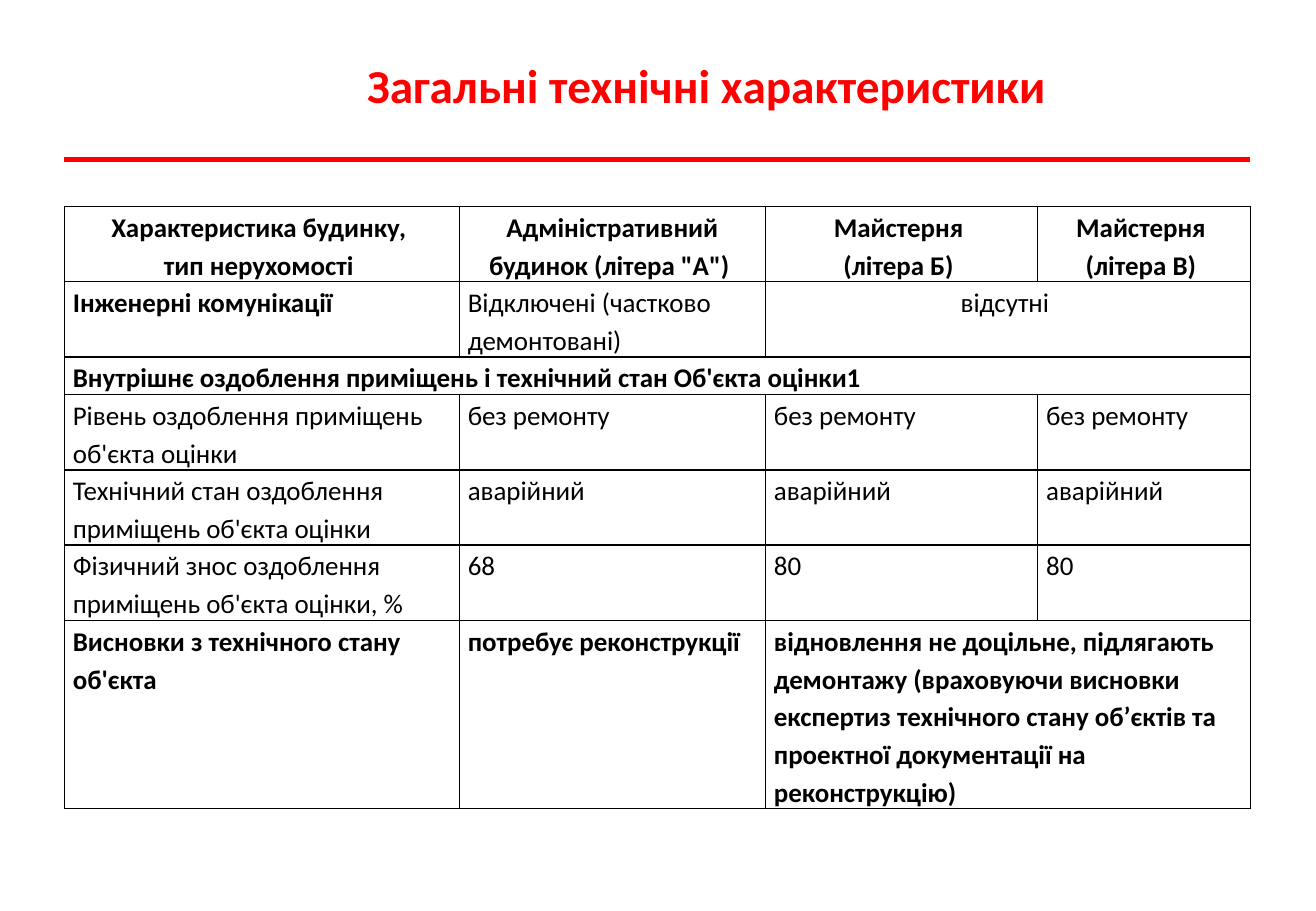
"""Build a slide with a table of the general technical characteristics of buildings."""
import lxml.etree
import pptx
import pptx.dml.color
import pptx.enum.shapes
import pptx.enum.text
import pptx.oxml.ns
import pptx.util

WIDTH, HEIGHT = 10.83, 7.5
LEFT, TABLE_TOP, LINE_HEIGHT = 0.53, 1.7, 0.31
COLUMNS = (3.25, 2.52, 2.24, 1.75)
FONT, RED, BLACK = "Calibri", "FF0000", "000000"

ROW_LINES = (2, 2, 1, 2, 2, 2, 5)
ROWS = (
    ("Характеристика будинку, \nтип нерухомості ",
     "Адміністративний будинок (літера \"А\") ",
     "Майстерня \n(літера Б) ", "Майстерня \n(літера В) "),
    ("Інженерні комунікації", "Відключені (частково демонтовані)", "відсутні "),
    ("Внутрішнє оздоблення приміщень і технічний стан Об'єкта оцінки1",),
    ("Рівень оздоблення приміщень об'єкта оцінки",) + ("без ремонту",) * 3,
    ("Технічний стан оздоблення приміщень об'єкта оцінки",) + ("аварійний",) * 3,
    ("Фізичний знос оздоблення приміщень об'єкта оцінки, %", "68", "80", "80"),
    ("Висновки з технічного стану об'єкта", "потребує реконструкції",
     "відновлення не доцільне, підлягають демонтажу (враховуючи висновки "
     "експертиз технічного стану об’єктів та проектної документації на реконструкцію)"),
)
BOLD_ROWS = (0, 2, 6)
BOLD_CELLS = ((1, 0),)
CENTERED_CELLS = ((0, 0), (0, 1), (0, 2), (0, 3), (1, 2))


def rgb(value):
    return pptx.dml.color.RGBColor.from_string(value)


def inches(*values):
    return [pptx.util.Inches(v) for v in values]


def write(tf, text, size, color, bold, centered, spacing=1.0):
    align = pptx.enum.text.PP_ALIGN
    for i, line in enumerate(text.split("\n")):
        p = tf.add_paragraph() if i else tf.paragraphs[0]
        p.text = line
        p.alignment = align.CENTER if centered else align.LEFT
        p.line_spacing = spacing
        p.font.name = FONT
        p.font.size = pptx.util.Pt(size)
        p.font.bold = bold
        p.font.color.rgb = rgb(color)


def add_title(s, text):
    tf = s.shapes.add_textbox(*inches(1.72, 0.29, 8.27, 0.81)).text_frame
    tf.word_wrap = True
    tf.vertical_anchor = pptx.enum.text.MSO_ANCHOR.MIDDLE
    write(tf, text, 28, RED, True, True)


def add_rule(s, top):
    line = s.shapes.add_connector(
        pptx.enum.shapes.MSO_CONNECTOR.STRAIGHT,
        *inches(LEFT, top, LEFT + sum(COLUMNS), top))
    line.line.color.rgb = rgb(RED)
    line.line.width = pptx.util.Pt(3)
    lxml.etree.SubElement(line._element.spPr, pptx.oxml.ns.qn("a:effectLst"))


def style_cell(cell):
    qn = pptx.oxml.ns.qn
    cell.margin_left = cell.margin_right = pptx.util.Inches(0.07)
    cell.margin_top = cell.margin_bottom = 0
    tcPr = cell._tc.get_or_add_tcPr()
    for side in "LRTB":
        ln = lxml.etree.SubElement(tcPr, qn(f"a:ln{side}"), w=str(pptx.util.Pt(1)))
        fill = lxml.etree.SubElement(ln, qn("a:solidFill"))
        lxml.etree.SubElement(fill, qn("a:srgbClr"), val=BLACK)
    cell.fill.background()


def add_characteristics(s):
    height = LINE_HEIGHT * sum(ROW_LINES)
    table = s.shapes.add_table(
        len(ROWS), len(COLUMNS),
        *inches(LEFT, TABLE_TOP, sum(COLUMNS), height)).table
    table.first_row = table.horz_banding = False
    for column, width in zip(table.columns, COLUMNS):
        column.width = pptx.util.Inches(width)
    for row, lines in zip(table.rows, ROW_LINES):
        row.height = pptx.util.Inches(LINE_HEIGHT * lines)
    for cell in table.iter_cells():
        style_cell(cell)
    for r, texts in enumerate(ROWS):
        if len(texts) < len(COLUMNS):
            table.cell(r, len(texts) - 1).merge(table.cell(r, len(COLUMNS) - 1))
        for c, text in enumerate(texts):
            bold = r in BOLD_ROWS or (r, c) in BOLD_CELLS
            write(table.cell(r, c).text_frame, text, 16, BLACK, bold,
                  (r, c) in CENTERED_CELLS, 1.15)


def main():
    prs = pptx.Presentation()
    prs.slide_width, prs.slide_height = inches(WIDTH, HEIGHT)
    s = prs.slides.add_slide(prs.slide_layouts[6])
    add_rule(s, 1.31)
    add_title(s, "Загальні технічні характеристики ")
    add_characteristics(s)
    prs.save("out.pptx")


if __name__ == "__main__":
    main()
